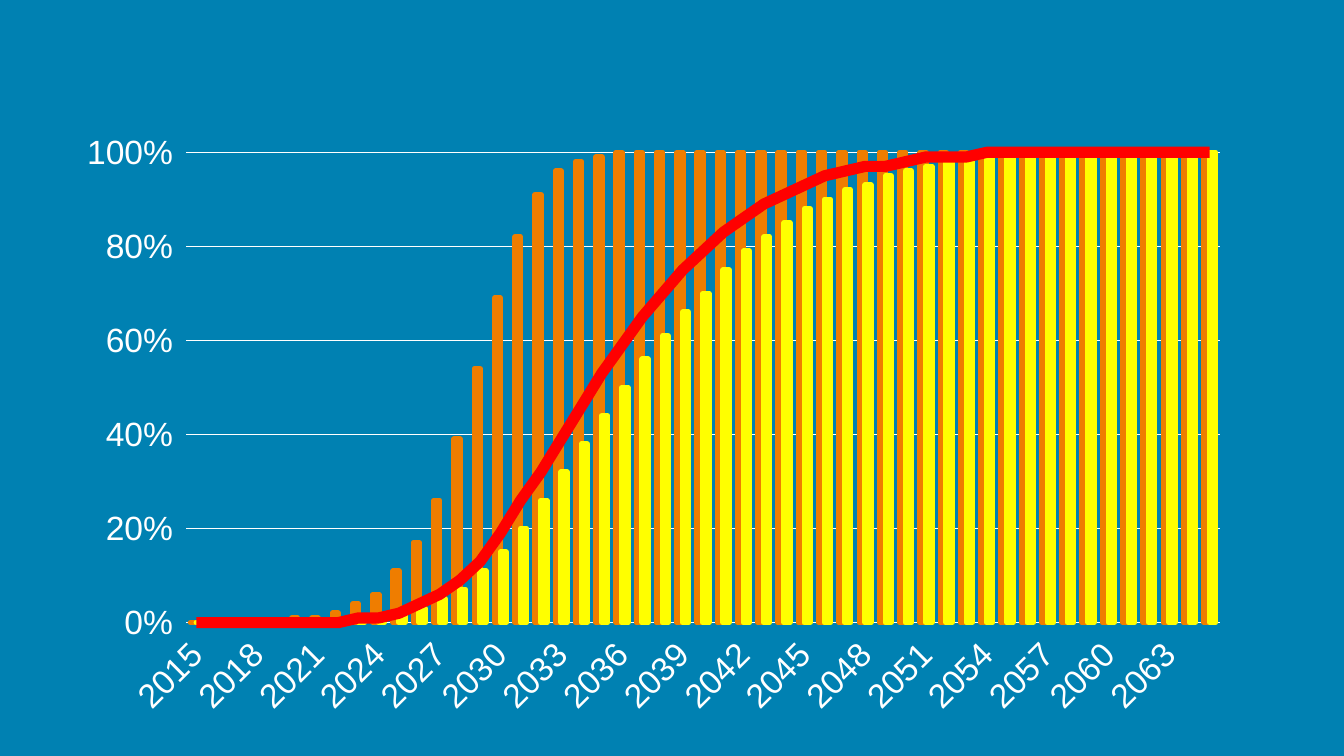
import pptx
import pptx.chart.data
import pptx.dml.color
import pptx.enum.chart
import pptx.oxml
import pptx.oxml.ns
import pptx.util
from pptx.util import Cm

YEARS = range(2015, 2066)
FAST = [0, 0, 0, 0, 0, 1, 1, 2, 4, 6, 11, 17, 26, 39, 54, 69, 82, 91, 96, 98, 99]
SLOW = [0, 0, 0, 0, 0, 0, 0, 0, 1, 1, 2, 3, 5, 7, 11, 15, 20, 26, 32, 38,
        44, 50, 56, 61, 66, 70, 75, 79, 82, 85, 88, 90, 92, 93, 95, 96, 97,
        98, 99, 99]
TREND = [0, 0, 0, 0, 0, 0, 0, 0, 1, 1, 2, 4, 6, 9, 13, 19, 26, 32, 39, 46,
         53, 59, 65, 70, 75, 79, 83, 86, 89, 91, 93, 95, 96, 97, 97, 98, 99,
         99, 99]
WHITE = "FFFFFF"
BARS = ["EF7D00", "FFFF00"]
RED = "FF0000"


def color(tone):
    return pptx.dml.color.RGBColor.from_string(tone)


def paint(fill, tone):
    fill.solid()
    fill.fore_color.rgb = color(tone)


def stroke(line, tone, width):
    paint(line.fill, tone)
    line.width = pptx.util.Pt(width)


def shares(rise):
    full = rise + [100] * (len(YEARS) - len(rise))
    return [value / 100 for value in full]


def node(xml):
    space = pptx.oxml.ns.nsdecls("c")
    return pptx.oxml.parse_xml(xml.replace(">", f" {space}>", 1))


def split_line(chart):
    qn = pptx.oxml.ns.qn
    bars = chart.plots[0]._element
    last = bars.findall(qn("c:ser"))[-1]
    for flag in last.findall(qn("c:invertIfNegative")):
        last.remove(flag)
    group = node('<c:lineChart><c:grouping val="standard"/>'
                 '<c:varyColors val="0"/></c:lineChart>')
    group.append(last)
    group.append(node('<c:marker val="1"></c:marker>'))
    for axis in bars.findall(qn("c:axId")):
        group.append(node(f'<c:axId val="{axis.get("val")}"></c:axId>'))
    bars.addnext(group)
    return chart.plots[1].series[0]


def set_frame(chart, left, top, width, height):
    sides = zip("xywh", (left, top, width, height))
    rules = '<c:layoutTarget val="inner"/>'
    rules += '<c:xMode val="edge"/><c:yMode val="edge"/>'
    rules += "".join(f'<c:{side} val="{part}"/>' for side, part in sides)
    area = chart._chartSpace.chart.plotArea
    for old in area.findall(pptx.oxml.ns.qn("c:layout")):
        area.remove(old)
    area.insert(0, node(f"<c:layout><c:manualLayout>{rules}</c:manualLayout></c:layout>"))


def style_axes(chart):
    years, scale = chart.category_axis, chart.value_axis
    for axis in (years, scale):
        axis.format.line.fill.background()
        axis.major_tick_mark = pptx.enum.chart.XL_TICK_MARK.OUTSIDE
        font = axis.tick_labels.font
        font.size = pptx.util.Pt(18)
        font.name = "Arial"
        font.color.rgb = color(WHITE)
    years.has_major_gridlines = False
    body = years._element.find(pptx.oxml.ns.qn("c:txPr"))[0]
    body.set("rot", "-2700000")
    body.set("vert", "horz")
    tail = years._element.find(pptx.oxml.ns.qn("c:noMultiLvlLbl"))
    for name in ("tickLblSkip", "tickMarkSkip"):
        tail.addprevious(node(f'<c:{name} val="3"></c:{name}>'))
    scale.minimum_scale, scale.maximum_scale = 0, 1
    scale.major_unit = 0.2
    scale.tick_labels.number_format = "0%"
    scale.tick_labels.number_format_is_linked = False
    scale.has_major_gridlines = True
    stroke(scale.major_gridlines.format.line, WHITE, 0.75)


def draw_chart(slide, left, top, width, height):
    data = pptx.chart.data.CategoryChartData(number_format="0%")
    data.categories = [str(year) for year in YEARS]
    for count, rise in enumerate((FAST, SLOW, TREND), 1):
        data.add_series(f"Series {count}", shares(rise))
    kind = pptx.enum.chart.XL_CHART_TYPE.COLUMN_CLUSTERED
    chart = slide.shapes.add_chart(kind, left, top, width, height, data).chart
    chart.has_legend = False
    chart.has_title = False
    chart.font.size = pptx.util.Pt(18)
    chart.font.name = "Arial"
    trend = split_line(chart)
    plot = chart.plots[0]
    plot.gap_width = 150
    plot.vary_by_categories = False
    for series, tone in zip(plot.series, BARS):
        paint(series.format.fill, tone)
        stroke(series.format.line, tone, 3)
    stroke(trend.format.line, RED, 6)
    trend.marker.style = pptx.enum.chart.XL_MARKER_STYLE.NONE
    trend.smooth = False
    style_axes(chart)
    set_frame(chart, 0.1, 0.05, 0.88, 0.78)


def main():
    deck = pptx.Presentation()
    deck.slide_width, deck.slide_height = Cm(25.4), Cm(14.29)
    slide = deck.slides.add_slide(deck.slide_layouts[6])
    paint(slide.background.fill, "0081B2")
    draw_chart(slide, Cm(1.3), Cm(2.31), Cm(22.2), Cm(11.4))
    deck.save("out.pptx")


if __name__ == "__main__":
    main()
